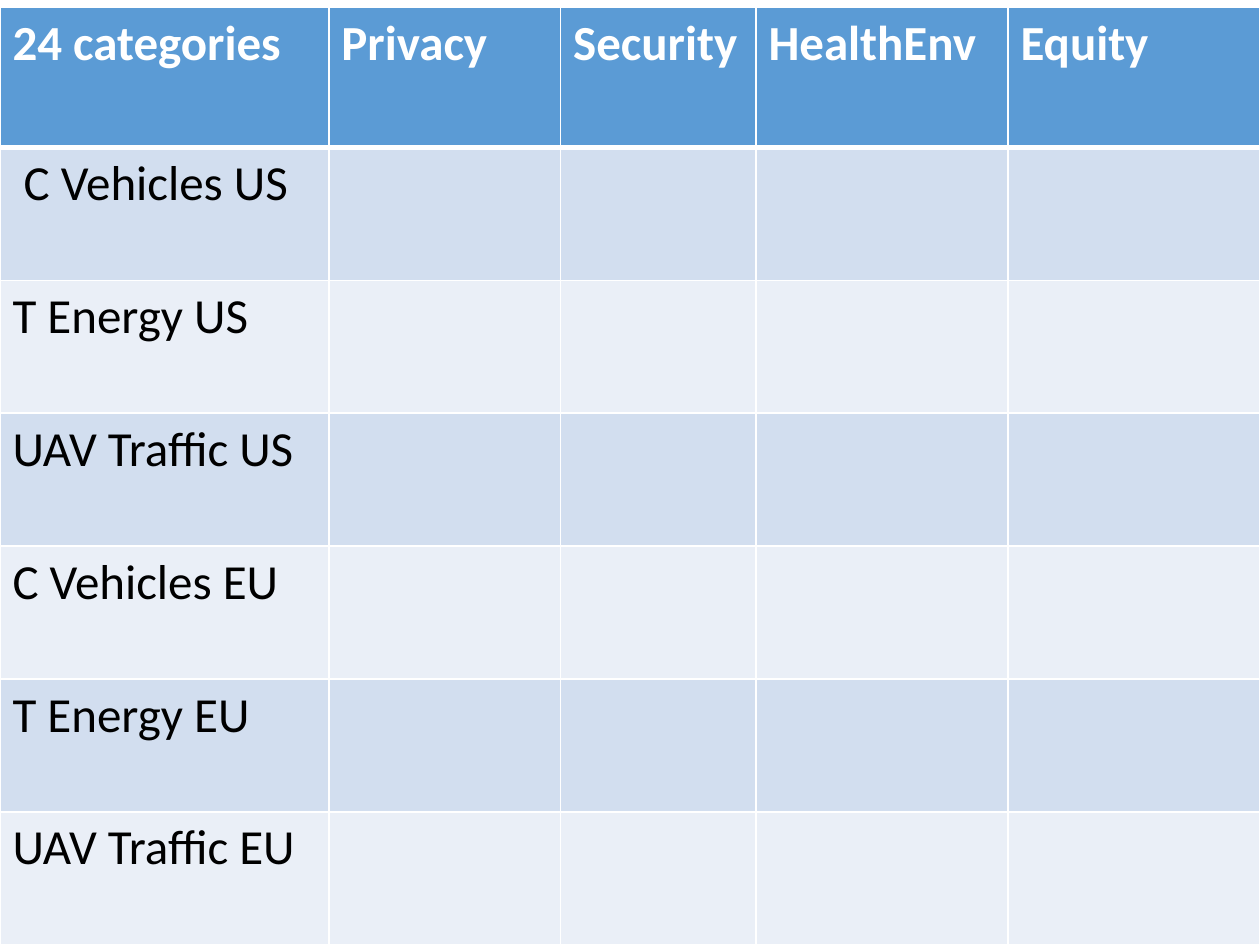
from collections import namedtuple

from lxml import etree
from pptx import Presentation
from pptx import util as u
from pptx.dml.color import RGBColor
from pptx.oxml import ns

Theme = namedtuple("Theme", "font size head bands white black thin thick")
look = Theme(font="Calibri", size=28, head="5B9BD5", bands=("D2DEEF", "EAEFF7"),
             white="FFFFFF", black="000000", thin=1, thick=3)


def write(cell, words, color=look.black, bold=False):
    """Put one formatted run in a table cell."""
    run = cell.text_frame.paragraphs[0].add_run()
    run.text = words
    run.font.name = look.font
    run.font.size = u.Pt(look.size)
    run.font.bold = bold
    run.font.color.rgb = RGBColor.from_string(color)


def edge(cell, widths):
    """Draw white borders; they must come before the fill in the cell's XML."""
    props = cell._tc.get_or_add_tcPr()
    for spot, (side, width) in enumerate(widths.items()):
        line = etree.Element(ns.qn(f"a:ln{side}"), w=str(u.Pt(width)))
        fill = etree.SubElement(line, ns.qn("a:solidFill"))
        etree.SubElement(fill, ns.qn("a:srgbClr"), val=look.white)
        props.insert(spot, line)


# Slide
deck = Presentation()
deck.slide_width, deck.slide_height = u.Cm(25.4), u.Cm(19.05)
slide = deck.slides.add_slide(deck.slide_layouts[6])

# Content: issues across, topics by region down
heads = ["24 categories", "Privacy", "Security", "HealthEnv", "Equity"]
topics = [" C Vehicles US", "T Energy US", "UAV Traffic US",
          "C Vehicles EU", "T Energy EU", "UAV Traffic EU"]

# Table grid
wide = [6.63, 4.67, 3.94, 5.08, 5.08]
tall = [2.82] + [2.68] * len(topics)
grid = slide.shapes.add_table(len(tall), len(wide), u.Cm(0), u.Cm(0.15),
                              u.Cm(sum(wide)), u.Cm(sum(tall))).table
for col, width in zip(grid.columns, wide):
    col.width = u.Cm(width)
for row, height in zip(grid.rows, tall):
    row.height = u.Cm(height)

# Fills and borders, with a thick rule under the header
for r, row in enumerate(grid.rows):
    tint = look.head if r == 0 else look.bands[(r - 1) % 2]
    for cell in row.cells:
        cell.fill.solid()
        cell.fill.fore_color.rgb = RGBColor.from_string(tint)
        edge(cell, {"L": look.thin, "R": look.thin,
                    "T": look.thick if r == 1 else look.thin,
                    "B": look.thick if r == 0 else look.thin})

# Header and first column text
for c, head in enumerate(heads):
    write(grid.cell(0, c), head, color=look.white, bold=True)
for r, topic in enumerate(topics, 1):
    write(grid.cell(r, 0), topic)

deck.save("out.pptx")
